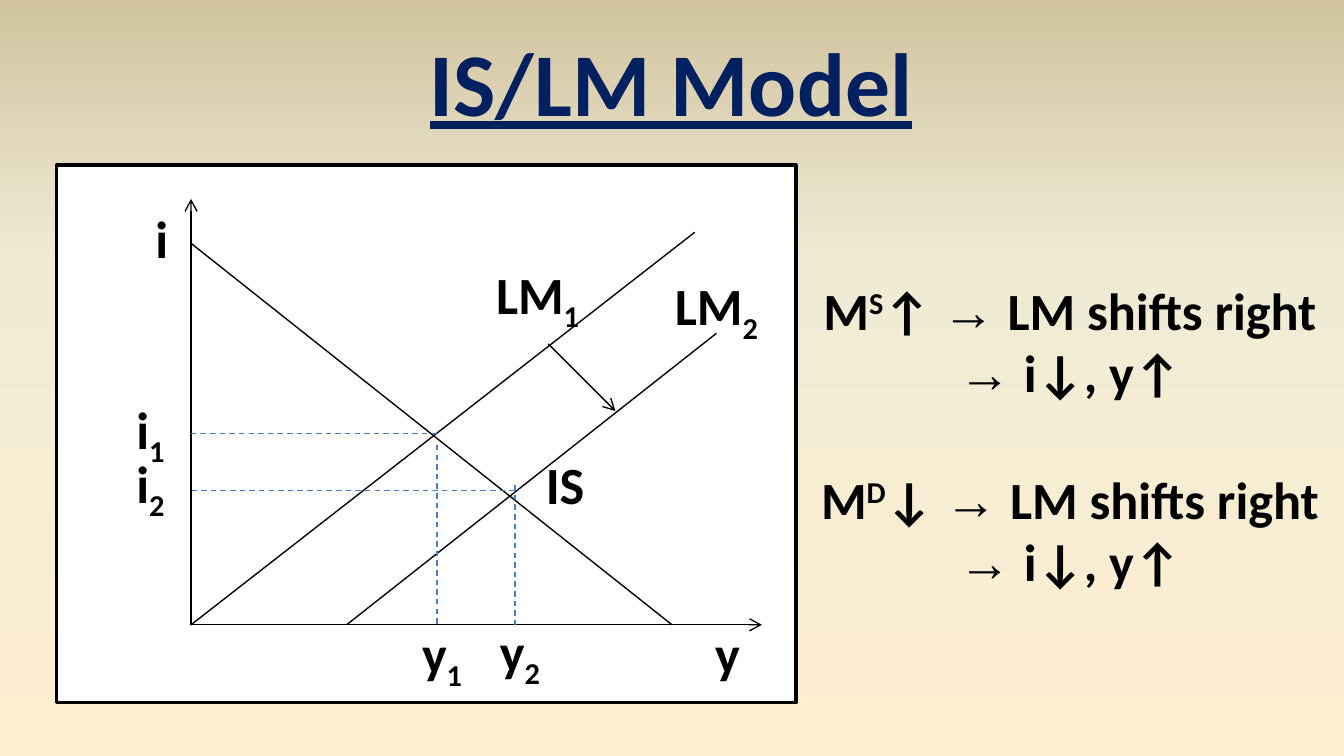
from copy import deepcopy

from lxml import etree
from pptx import Presentation, util as u
from pptx.dml.color import RGBColor
from pptx.enum import dml, shapes, text
from pptx.oxml.ns import qn

THEME = {
    "title": "002060", "ink": "000000", "panel": "FFFFFF", "guide": "4B7EBC",
    "background": [(0, "FFEFD1"), (0.65, "F0EBD5"), (1, "D1C39F")],
    "font": "Calibri", "arrow_font": "Times New Roman",
    "title_size": 48, "body_size": 28, "thin": 0.75, "frame": 2,
}
SUPER, SUB = 30, -25  # baseline shift in percent

# All lengths are in centimetres.
SLIDE_SIZE = (25.4, 14.29)
TITLE = ("IS/LM Model", (7.82, 0.38, 9.73, 2.31))
PANEL = (1.07, 3.12, 13.97, 10.16)
NOTES_BOX = (15.04, 5.13, 10.36, 6.25)

IMPLIES = ("→ ", 0, THEME["arrow_font"])
OUTCOME = [IMPLIES, ("i↓, y↑", 0)]
CAUSES = [("S", "↑ "), ("D", "↓ ")]

X0, Y0 = 3.61, 11.81  # origin of the diagram
Y1, Y2 = 8.26, 9.73   # output at each equilibrium
I1, I2 = 8.2, 9.27    # interest rate at each equilibrium

AXES = [((X0, Y0), (X0, 3.76)), ((X0, Y0), (14.4, Y0))]
CURVES = [
    ((13.13, 4.39), (X0, Y0)),   # LM1
    ((X0, 4.6), (12.7, Y0)),     # IS
    ((13.54, 6.3), (6.55, Y0)),  # LM2
]
SHIFT = ((10.36, 6.5), (11.63, 7.77))
GUIDES = [
    ((Y2, I2), (X0, I2)), ((Y1, I1), (X0, I1)),
    ((Y1, 8.41), (Y1, Y0)), ((Y2, 9.17), (Y2, Y0)),
]
LABEL_HEIGHT = 1.45
LABELS = [  # name, subscript, left, top, width
    ("IS", "", 9.73, 8.43, 1.9),
    ("LM", "1", 8.89, 4.83, 2.54),
    ("LM", "2", 12.27, 5.05, 2.54),
    ("i", "", 2.11, 3.78, 1.9),
    ("i", "1", 2.11, 7.39, 1.47),
    ("i", "2", 2.11, 8.41, 1.47),
    ("y", "", 12.9, 11.61, 1.7),
    ("y", "1", 7.62, 11.61, 1.47),
    ("y", "2", 9.09, 11.58, 1.47),
]


def cm(*lengths):
    return [u.Cm(length) for length in lengths]


def rgb(name):
    return RGBColor.from_string(THEME[name])


def add_text(slide, paragraphs, box, size="body_size", color="ink",
             underline=None, wrap=True, gaps=()):
    """Each paragraph lists (words, baseline[, font]); gaps maps index to space before."""
    frame = slide.shapes.add_textbox(*cm(*box)).text_frame
    frame.word_wrap = wrap
    frame.auto_size = text.MSO_AUTO_SIZE.SHAPE_TO_FIT_TEXT
    for index, pieces in enumerate(paragraphs):
        paragraph = frame.add_paragraph() if index else frame.paragraphs[0]
        paragraph.alignment = text.PP_ALIGN.CENTER
        if index in gaps:
            paragraph.space_before = u.Pt(gaps[index])
        for words, baseline, *font in pieces:
            run = paragraph.add_run()
            run.text = words
            run.font.name = font[0] if font else THEME["font"]
            run.font.size = u.Pt(THEME[size])
            run.font.bold = True
            run.font.underline = underline
            run.font.color.rgb = rgb(color)
            if baseline:
                run._r.get_or_add_rPr().set("baseline", str(baseline * 1000))


def add_line(slide, start, end, color="ink", dashed=False, arrow=False):
    connector = slide.shapes.add_connector(
        shapes.MSO_CONNECTOR.STRAIGHT, *cm(*start, *end))
    connector.line.color.rgb = rgb(color)
    connector.line.width = u.Pt(THEME["thin"])
    if dashed:
        connector.line.dash_style = dml.MSO_LINE.DASH
    properties = connector.element.spPr
    if arrow:
        etree.SubElement(properties.find(qn("a:ln")), qn("a:tailEnd"), type="arrow")
    etree.SubElement(properties, qn("a:effectLst"))


def paint_background(slide):
    fill = slide.background.fill
    fill.gradient()
    fill.gradient_angle = 90
    stop_list = slide.element.find(".//" + qn("a:gsLst"))
    stop_list.insert(1, deepcopy(stop_list[0]))
    for stop, (position, color) in zip(fill.gradient_stops, THEME["background"]):
        stop.position = position
        stop.color.rgb = RGBColor.from_string(color)


def add_diagram(slide):
    panel = slide.shapes.add_shape(shapes.MSO_SHAPE.RECTANGLE, *cm(*PANEL))
    panel.shadow.inherit = False
    panel.fill.solid()
    panel.fill.fore_color.rgb = rgb("panel")
    panel.line.color.rgb = rgb("ink")
    panel.line.width = u.Pt(THEME["frame"])
    for curve in CURVES:
        add_line(slide, *curve)
    for arrow in AXES + [SHIFT]:
        add_line(slide, *arrow, arrow=True)
    for guide in GUIDES:
        add_line(slide, *guide, color="guide", dashed=True)
    for name, subscript, left, top, width in LABELS:
        pieces = [(name, 0)] + ([(subscript, SUB)] if subscript else [])
        add_text(slide, [pieces], (left, top, width, LABEL_HEIGHT))


def main():
    deck = Presentation()
    deck.slide_width, deck.slide_height = cm(*SLIDE_SIZE)
    slide = deck.slides.add_slide(deck.slide_layouts[6])
    paint_background(slide)

    title, title_box = TITLE
    add_text(slide, [[(title, 0)]], title_box, size="title_size",
             color="title", underline=True, wrap=False)
    notes = []
    for market_side, change in CAUSES:
        notes += [[("M", 0), (market_side, SUPER), (change, 0), IMPLIES,
                   ("LM shifts right", 0)], OUTCOME]
    add_text(slide, notes, NOTES_BOX, gaps={2: 34})
    add_diagram(slide)
    deck.save("out.pptx")


if __name__ == "__main__":
    main()
